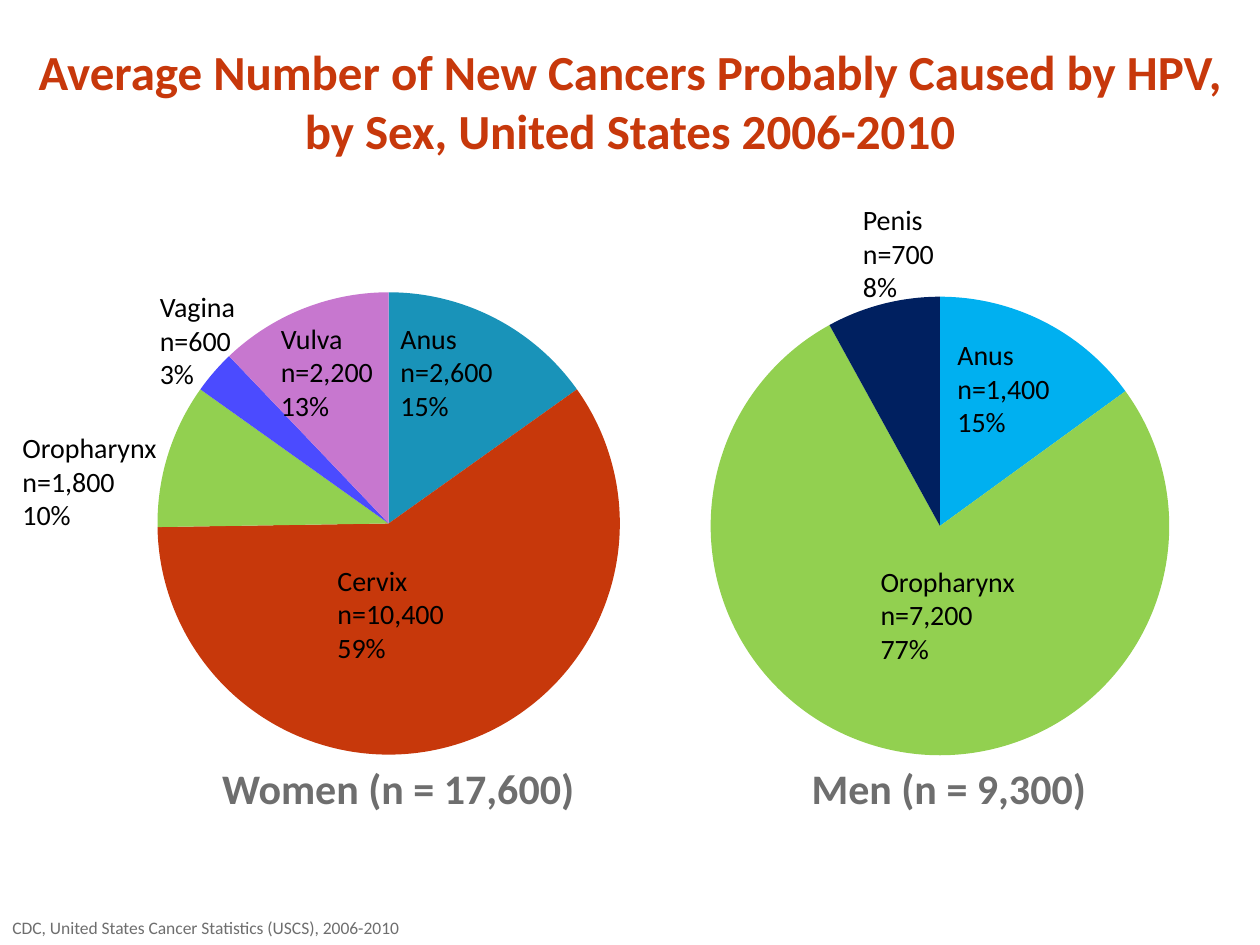
from lxml import etree
from pptx import Presentation
from pptx import util as u
from pptx.chart.data import CategoryChartData
from pptx.dml.color import RGBColor
from pptx.enum import chart as charts, text
from pptx.oxml import ns

FONT = "Calibri"
BLACK = RGBColor(0x00, 0x00, 0x00)
GRAY = RGBColor(0x6E, 0x6E, 0x6E)
RUST = RGBColor(0xC7, 0x38, 0x0B)
TEAL = RGBColor(0x19, 0x93, 0xB9)
GREEN = RGBColor(0x92, 0xD0, 0x50)
BLUE = RGBColor(0x4B, 0x4B, 0xFF)
ORCHID = RGBColor(0xC7, 0x77, 0xCF)
SKY = RGBColor(0x00, 0xB0, 0xF0)
NAVY = RGBColor(0x00, 0x20, 0x60)


def write_text(frame, content, size=16, color=BLACK, bold=False,
               align=text.PP_ALIGN.LEFT, space_after=0):
    paragraph = frame.paragraphs[0]
    paragraph.text = content
    paragraph.alignment = align
    paragraph.space_after = u.Pt(space_after)
    for run in paragraph.runs:
        run.font.name = FONT
        run.font.size = u.Pt(size)
        run.font.bold = bold
        run.font.color.rgb = color


class SlideBuilder:
    def __init__(self, slide):
        self.slide = slide

    def text_box(self, content, left, top, width, height,
                 anchor=text.MSO_ANCHOR.TOP, **style):
        box = self.slide.shapes.add_textbox(*map(u.Inches, (left, top, width, height)))
        frame = box.text_frame
        frame.word_wrap = True
        frame.vertical_anchor = anchor
        write_text(frame, content, **style)

    def pie(self, left, top, width, height, diameter, slices):
        data = CategoryChartData()
        data.categories = [str(number + 1) for number in range(len(slices))]
        data.add_series("Series 1", [value for value, color in slices])
        chart = self.slide.shapes.add_chart(
            charts.XL_CHART_TYPE.PIE, *map(u.Inches, (left, top, width, height)), data).chart
        chart.has_legend = False
        chart.has_title = False
        chart.font.name = FONT
        chart.font.size = u.Pt(18)
        chart.font.color.rgb = BLACK
        plot = chart.plots[0]
        plot.vary_by_categories = True
        for index, (value, color) in enumerate(slices):
            fill = plot.series[0].points[index].format.fill
            fill.solid()
            fill.fore_color.rgb = color
        self.center_plot(chart, diameter / width, diameter / height)

    def center_plot(self, chart, width_share, height_share):
        plot_area = chart.plots[0]._element.getparent()
        for old_layout in plot_area.findall(ns.qn("c:layout")):
            plot_area.remove(old_layout)
        layout = etree.Element(ns.qn("c:layout"))
        plot_area.insert(0, layout)
        manual = etree.SubElement(layout, ns.qn("c:manualLayout"))
        settings = {"layoutTarget": "inner", "xMode": "edge", "yMode": "edge",
                    "x": (1 - width_share) / 2, "y": (1 - height_share) / 2,
                    "w": width_share, "h": height_share}
        for name, value in settings.items():
            etree.SubElement(manual, ns.qn("c:" + name)).set("val", str(value))


def main():
    presentation = Presentation()
    presentation.slide_width = u.Inches(10)
    presentation.slide_height = u.Inches(7.5)
    builder = SlideBuilder(presentation.slides.add_slide(presentation.slide_layouts[6]))
    center = text.PP_ALIGN.CENTER

    # Title and source
    builder.text_box("Average Number of New Cancers Probably Caused by HPV, "
                     "by Sex, United States 2006-2010", 0, 0.17, 10, 1.25,
                     anchor=text.MSO_ANCHOR.MIDDLE, size=28, color=RUST,
                     bold=True, align=center)
    builder.text_box("CDC, United States Cancer Statistics (USCS), 2006-2010",
                     0, 7.23, 5.92, 0.27, size=10, color=GRAY, space_after=6)

    # Pies
    builder.pie(1.11, 1.5, 3.95, 5.31, 3.67,
                [(15, TEAL), (59, RUST), (10, GREEN), (3, BLUE), (12, ORCHID)])
    builder.pie(5.5, 1.85, 3.92, 4.65, 3.64, [(15, SKY), (77, GREEN), (8, NAVY)])

    # Captions below the pies
    for caption, left, width in [("Women (n = 17,600)", 1.62, 3.08),
                                 ("Men (n = 9,300)", 5.92, 3.22)]:
        builder.text_box(caption, left, 6, width, 0.5, size=24, color=GRAY,
                         bold=True, align=center)

    # Slice labels: site, cases, share, left, top
    labels = [
        ("Oropharynx", "1,800", 10, 0.08, 3.37),
        ("Anus", "2,600", 15, 3.08, 2.5),
        ("Cervix", "10,400", 59, 2.58, 4.42),
        ("Vagina", "600", 3, 1.17, 2.25),
        ("Vulva", "2,200", 13, 2.13, 2.5),
        ("Anus", "1,400", 15, 7.5, 2.63),
        ("Oropharynx", "7,200", 77, 6.89, 4.43),
        ("Penis", "700", 8, 6.75, 1.56),
    ]
    for site, cases, share, left, top in labels:
        builder.text_box(f"{site}\nn={cases}\n{share}%", left, top, 1.58, 0.91)

    presentation.save("out.pptx")


if __name__ == "__main__":
    main()
